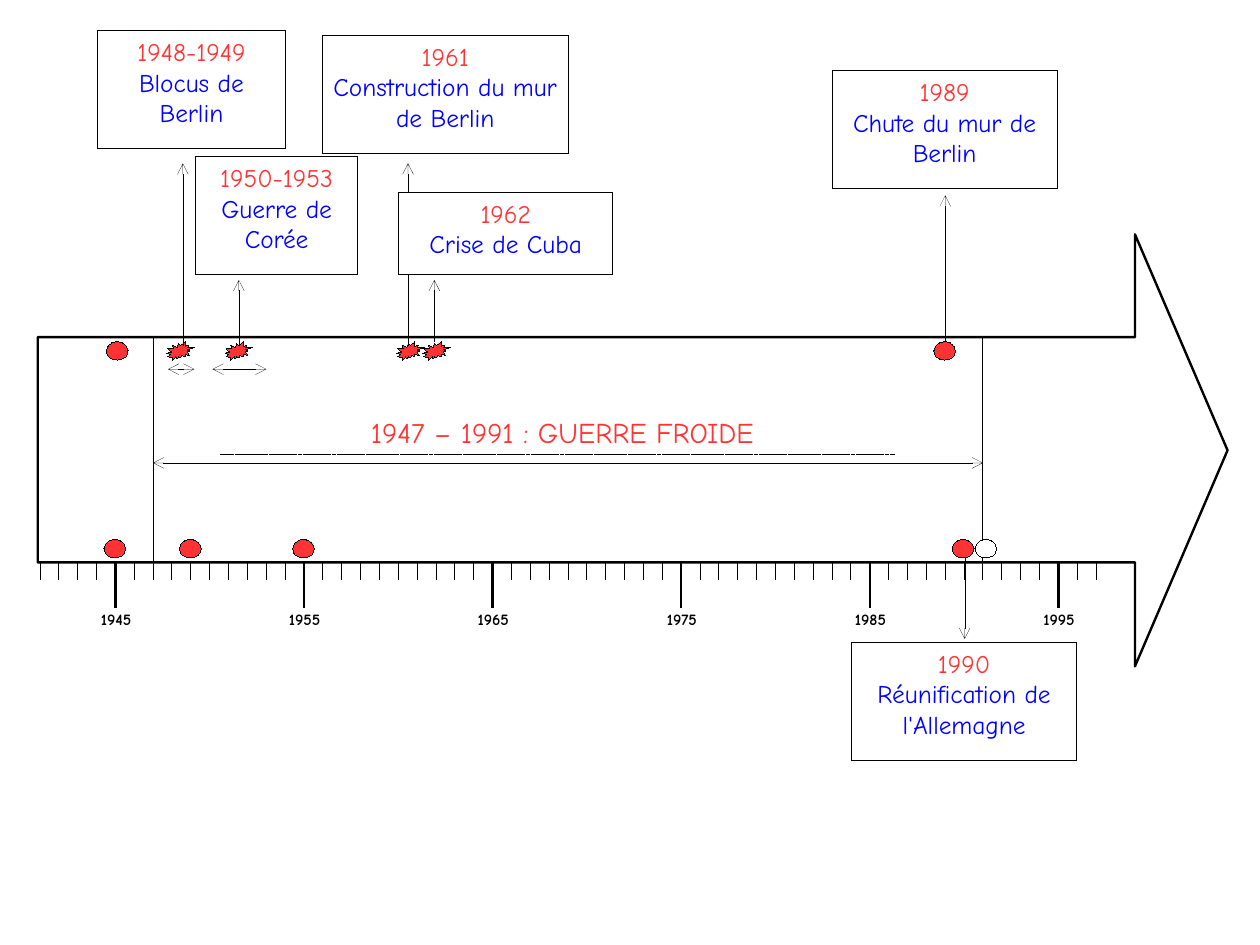
from lxml.etree import SubElement
from pptx import Presentation
from pptx.dml.color import RGBColor
from pptx.enum.dml import MSO_LINE
from pptx.enum.shapes import MSO_CONNECTOR, MSO_SHAPE
from pptx.enum.text import MSO_ANCHOR, PP_ALIGN
from pptx.oxml.ns import qn
from pptx.util import Inches, Pt

BLACK, WHITE, RED, BLUE = "000000", "FFFFFF", "FF3333", "0000FF"
FIRST_YEAR, LAST_YEAR = 1941, 1997
YEAR_WIDTH = 0.165
CM_PER_INCH = 2.54
FRAME_FORMAT = {"margin_top": Inches(0.05), "margin_bottom": Inches(0.05),
                "margin_left": Inches(0.09), "margin_right": Inches(0.09),
                "vertical_anchor": MSO_ANCHOR.TOP}
BURST = [(12, 3), (10, 2), (9, 5), (5, 3), (6, 6), (1, 6), (4, 9), (0, 10), (3, 11), (1, 13),
         (5, 14), (5, 16), (8, 13), (9, 15), (10, 13), (12, 14), (13, 12), (16, 13), (16, 11),
         (20, 12), (18, 9), (20, 8), (18, 7), (24, 5), (18, 5), (19, 3), (16, 4), (16, 0)]
EVENTS = [
    ((0.85, 0.27, 1.65, 1.03), "1948-1949", "Blocus de Berlin", (1.6, 3.03, 1.43)),
    ((2.82, 0.31, 2.15, 1.03), "1961", "Construction du mur de Berlin", (3.57, 3.03, 1.43)),
    ((1.71, 1.37, 1.42, 1.03), "1950-1953", "Guerre de Corée", (2.09, 3.03, 2.45)),
    ((3.49, 1.68, 1.87, 0.72), "1962", "Crise de Cuba", (3.8, 2.99, 2.45)),
    ((7.28, 0.62, 1.97, 1.03), "1989", "Chute du mur de Berlin", (8.27, 2.99, 1.71)),
    ((7.45, 5.62, 1.97, 1.03), "1990", "Réunification de l'Allemagne", (8.44, 4.88, 5.59)),
]


def color(value):
    """Turn a hex string into a colour."""
    return RGBColor.from_string(value)


def apply(target, values):
    """Set each named attribute on the target."""
    for name, value in values.items():
        setattr(target, name, value)


def stroke(shape, width):
    """Give a shape or connector a black line, where zero is a hairline."""
    shape.line.color.rgb = color(BLACK)
    shape.get_or_add_ln().set("w", str(Pt(width)))


def paint(shape, fill=None, width=0):
    """Give a shape a black outline, an optional fill and no shadow."""
    shape.shadow.inherit = False
    stroke(shape, width)
    if fill:
        shape.fill.solid()
        shape.fill.fore_color.rgb = color(fill)
    else:
        shape.fill.background()


def add_line(page, start, end, width=0, ends=(), dash=None):
    """Draw a black line with open arrowheads at the named ends."""
    line = page.shapes.add_connector(
        MSO_CONNECTOR.STRAIGHT, *(Inches(value) for value in (*start, *end)))
    stroke(line, width)
    if dash:
        line.line.dash_style = dash
    for name in ends:
        SubElement(line.get_or_add_ln(), qn(f"a:{name}"), type="arrow")
    SubElement(line.element.spPr, qn("a:effectLst"))


def add_outline(page, points, fill=None, width=0):
    """Draw a closed outline through points given in inches."""
    corners = [(Inches(x), Inches(y)) for x, y in points]
    builder = page.shapes.build_freeform(*corners[0])
    builder.add_line_segments(corners[1:], close=True)
    paint(builder.convert_to_shape(), fill, width)


def write(shape, lines, size, bold=False, wrap=True):
    """Write centred lines, each a pair of text and colour."""
    frame = shape.text_frame
    apply(frame, {**FRAME_FORMAT, "word_wrap": wrap})
    for index, (text, shade) in enumerate(lines):
        para = frame.add_paragraph() if index else frame.paragraphs[0]
        para.alignment = PP_ALIGN.CENTER
        span = para.add_run()
        span.text = text
        apply(span.font, {"name": "Comic Neue", "size": Pt(size), "bold": bold})
        span.font.color.rgb = color(shade)


def add_label(page, box, text, shade, size, bold=False):
    """Place one line of free text in a box."""
    label = page.shapes.add_textbox(*map(Inches, box))
    write(label, [(text, shade)], size, bold, wrap=False)


def draw_band(page, box):
    """Draw the wide time arrow."""
    left, top, width, height = box
    right, bottom, neck = left + width, top + height, left + 9.6
    upper, lower = top + 0.9, top + 2.87
    add_outline(page, [(left, upper), (neck, upper), (neck, top), (right, top + height / 2),
                       (neck, bottom), (neck, lower), (left, lower)], width=1.5)


def draw_scale(page, box):
    """Draw the yearly ticks and the decade labels."""
    left, top, width, height = box
    for year in range(FIRST_YEAR, LAST_YEAR + 1):
        x = left + (year - FIRST_YEAR) * YEAR_WIDTH
        decade = year % 10 == 5
        add_line(page, (x, top), (x, top + (0.4 if decade else 0.15)), 1.5 if decade else 0)
        if decade:
            add_label(page, (x - 1.17, top + height - 0.32, 2.35, 0.32),
                      str(year), BLACK, 10, True)


def draw_cold_war(page, box):
    """Mark the Cold War period with its bounds, span and title."""
    left, top, width, height = box
    right, middle = left + width, top + 1.1
    for x in (left, right):
        add_line(page, (x, top), (x, top + height))
    add_line(page, (left, middle), (right, middle), ends=("headEnd", "tailEnd"))
    add_line(page, (left + 0.59, middle - 0.07), (right - 0.77, middle - 0.07),
             dash=MSO_LINE.SQUARE_DOT)
    add_label(page, (left + 1.18, top + 0.63, 4.8, 0.45),
              "1947 – 1991 : GUERRE FROIDE", RED, 18)


def draw_markers(page, box):
    """Place the dots, bursts and short spans inside the band."""
    left, top, width, height = box
    upper, lower = top + 0.04, top + height - 0.25
    dots = [(0.6, upper, RED), (7.84, upper, RED), (0.58, lower, RED), (1.24, lower, RED),
            (2.23, lower, RED), (8, lower, RED), (8.2, lower, WHITE)]
    for x, y, fill in dots:
        dot = page.shapes.add_shape(
            MSO_SHAPE.OVAL, *map(Inches, (left + x, y, 0.19, 0.16)))
        paint(dot, fill)
    for x in (1.13, 1.64, 3.14, 3.37):
        add_outline(page, [(left + x + dx / 100, upper + dy / 100) for dx, dy in BURST], RED)
    for start, end in ((1.14, 1.37), (1.53, 2)):
        add_line(page, (left + start, top + 0.28), (left + end, top + 0.28),
                 ends=("headEnd", "tailEnd"))


def draw_event(page, box, date, title, arrow):
    """Draw one event box and the arrow that leads to it."""
    x, start, end = arrow
    add_line(page, (x, start), (x, end), ends=("tailEnd",))
    card = page.shapes.add_shape(MSO_SHAPE.RECTANGLE, *map(Inches, box))
    paint(card, WHITE)
    write(card, [(date, RED), (title, BLUE)], 16)


def main():
    """Build the timeline slide and save it."""
    deck = Presentation()
    apply(deck, {"slide_width": Inches(28 / CM_PER_INCH),
                 "slide_height": Inches(21 / CM_PER_INCH)})
    page = deck.slides.add_slide(deck.slide_layouts[6])
    draw_band(page, (0.33, 2.05, 10.41, 3.78))
    draw_scale(page, (0.35, 4.92, 9.24, 0.68))
    draw_cold_war(page, (1.34, 2.95, 7.26, 1.97))
    draw_markers(page, (0.33, 2.95, 9.6, 2.02))
    for event in EVENTS:
        draw_event(page, *event)
    deck.save("out.pptx")


if __name__ == "__main__":
    main()
